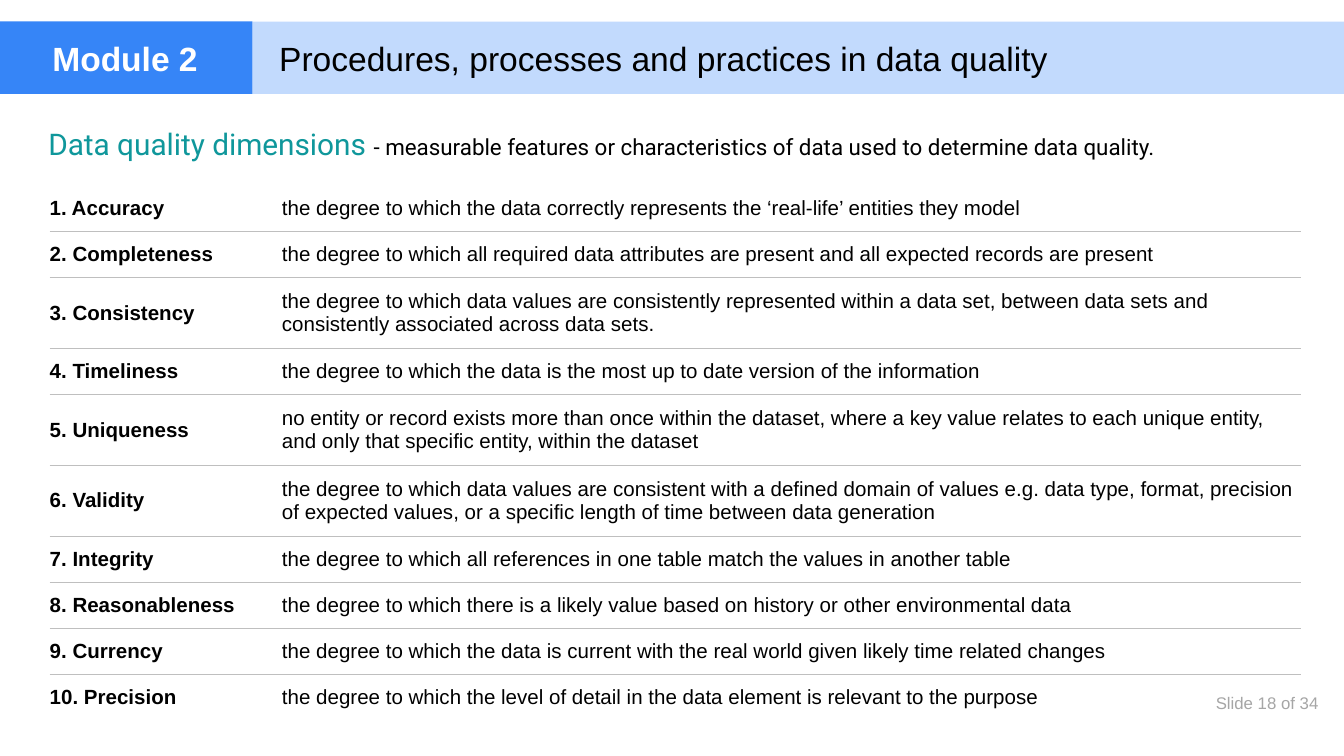
from dataclasses import dataclass

from lxml import etree
from pptx import Presentation
from pptx.dml.color import RGBColor
from pptx.enum.shapes import MSO_SHAPE
from pptx.enum.text import MSO_ANCHOR, MSO_AUTO_SIZE, PP_ALIGN
from pptx.oxml.ns import qn
from pptx.util import Inches, Pt

RECT = MSO_SHAPE.RECTANGLE
TOP, MID = MSO_ANCHOR.TOP, MSO_ANCHOR.MIDDLE
GROW, FIXED = MSO_AUTO_SIZE.SHAPE_TO_FIT_TEXT, MSO_AUTO_SIZE.NONE
LEFT, RIGHT = PP_ALIGN.LEFT, PP_ALIGN.RIGHT

MODULE = "Module 2"
TITLE = "Procedures, processes and practices in data quality"
LEAD = "Data quality dimensions "
GLOSS = "- measurable features or characteristics of data used to determine data quality."
PAGE = "Slide 18 of 34"
TERMS = [
    ("Accuracy", "the degree to which the data correctly represents the ‘real-life’ entities they model"),
    ("Completeness", "the degree to which all required data attributes are present and all expected records are present"),
    ("Consistency", "the degree to which data values are consistently represented within a data set, between data sets and consistently associated across data sets."),
    ("Timeliness", "the degree to which the data is the most up to date version of the information"),
    ("Uniqueness", "no entity or record exists more than once within the dataset, where a key value relates to each unique entity, and only that specific entity, within the dataset"),
    ("Validity", "the degree to which data values are consistent with a defined domain of values e.g. data type, format, precision of expected values, or a specific length of time between data generation"),
    ("Integrity", "the degree to which all references in one table match the values in another table"),
    ("Reasonableness", "the degree to which there is a likely value based on history or other environmental data"),
    ("Currency", "the degree to which the data is current with the real world given likely time related changes"),
    ("Precision", "the degree to which the level of detail in the data element is relevant to the purpose"),
]


@dataclass(frozen=True)
class Theme:
    sans: str = "Arial"
    lead: str = "Roboto"
    ink: str = "000000"
    white: str = "FFFFFF"
    blue: str = "3685F7"
    pale: str = "C2DAFD"
    teal: str = "0F979B"
    grey: str = "A6A6A6"
    rule: str = "BFBFBF"
    head: int = 18
    large: int = 16
    note: int = 12
    body: int = 11
    small: int = 9


T = Theme()
COLS, ROWS = 1001, 563
CELL = Inches(0.01)
TAB = 188
BAND = (16, 54)
GRID = (37, 138)
WIDTHS = (153, 779)
LINE, PAD, WRAP = 17, 8, 100


def units(*vals):
    return [round(v * CELL) for v in vals]


def put(obj, **vals):
    for key, val in vals.items():
        setattr(obj, key, val)


def inset(obj, left, top, right, foot):
    sides = ("margin_left", "margin_top", "margin_right", "margin_bottom")
    put(obj, **dict(zip(sides, units(left, top, right, foot))))


def write(frame, runs, **form):
    para = frame.paragraphs[0]
    put(para, **form)
    for text, size, hue, font, bold in runs:
        run = para.add_run()
        run.text = text
        put(run.font, size=Pt(size), name=font, bold=bold)
        run.font.color.rgb = RGBColor.from_string(hue)


def place(slide, box, pads, runs, fill=None, form=None, **body):
    if fill:
        shape = slide.shapes.add_shape(RECT, *units(*box))
        shape.shadow.inherit = False
        shape.fill.solid()
        shape.fill.fore_color.rgb = RGBColor.from_string(fill)
        shape.line.fill.background()
    else:
        shape = slide.shapes.add_textbox(*units(*box))
    frame = shape.text_frame
    put(frame, **body)
    inset(frame, *pads)
    write(frame, runs, **(form or {"alignment": LEFT}))


def border(cell, drawn):
    props = cell._tc.get_or_add_tcPr()
    for spot, side in enumerate(("lnL", "lnR", "lnT", "lnB")):
        edge = etree.Element(qn("a:" + side), w=str(Pt(0.5)))
        if side in drawn:
            fill = etree.SubElement(edge, qn("a:solidFill"))
            etree.SubElement(fill, qn("a:srgbClr"), val=T.rule)
        else:
            etree.SubElement(edge, qn("a:noFill"))
        props.insert(spot, edge)


def tabulate(slide):
    lines = [1 + (len(text) > WRAP) for _, text in TERMS]
    highs = [n * LINE + 2 * PAD + 1 for n in lines]
    table = slide.shapes.add_table(
        len(TERMS), len(WIDTHS), *units(*GRID, sum(WIDTHS), sum(highs))
    ).table
    put(table, first_row=False, horz_banding=False)
    for col, wide in zip(table.columns, units(*WIDTHS)):
        col.width = wide
    for row, (term, text) in enumerate(TERMS):
        table.rows[row].height = units(highs[row])[0]
        drawn = ["lnT"] * (row > 0) + ["lnB"] * (row < len(TERMS) - 1)
        pair = ((f"{row + 1}. {term}", 0, True), (text, 20, False))
        for col, (words, left, bold) in enumerate(pair):
            cell = table.cell(row, col)
            cell.fill.background()
            cell.vertical_anchor = MID
            inset(cell, left, PAD, 0, PAD)
            write(cell.text_frame, [(words, T.body, T.ink, T.sans, bold)], space_before=Pt(6))
            border(cell, drawn)


def main():
    deck = Presentation()
    put(deck, slide_width=COLS * CELL, slide_height=ROWS * CELL)
    slide = deck.slides.add_slide(deck.slide_layouts[6])
    top, high = BAND
    place(slide, (846, 508, 156, 55), (59, 20, 20, 20),
          [(PAGE, T.small, T.grey, T.sans, False)],
          form={"alignment": RIGHT, "space_after": Pt(6)},
          word_wrap=False, auto_size=GROW, vertical_anchor=TOP)
    place(slide, (TAB, top, COLS - TAB, high), (20, 12, 20, 12),
          [(TITLE, T.head, T.ink, T.sans, False)], T.pale,
          word_wrap=True, auto_size=GROW, vertical_anchor=MID)
    place(slide, (0, top, TAB, high), (39, 12, 39, 12),
          [(MODULE, T.head, T.white, T.sans, True)], T.blue,
          word_wrap=False, auto_size=FIXED, vertical_anchor=MID)
    place(slide, (32, 76, 954, 445), (4, 4, 4, 4),
          [(LEAD, T.large, T.teal, T.lead, False), (GLOSS, T.note, T.ink, T.lead, False)],
          form={"line_spacing": 1.5, "space_before": Pt(3), "space_after": Pt(3)},
          word_wrap=True, auto_size=FIXED, vertical_anchor=TOP)
    tabulate(slide)
    deck.save("out.pptx")


if __name__ == "__main__":
    main()
